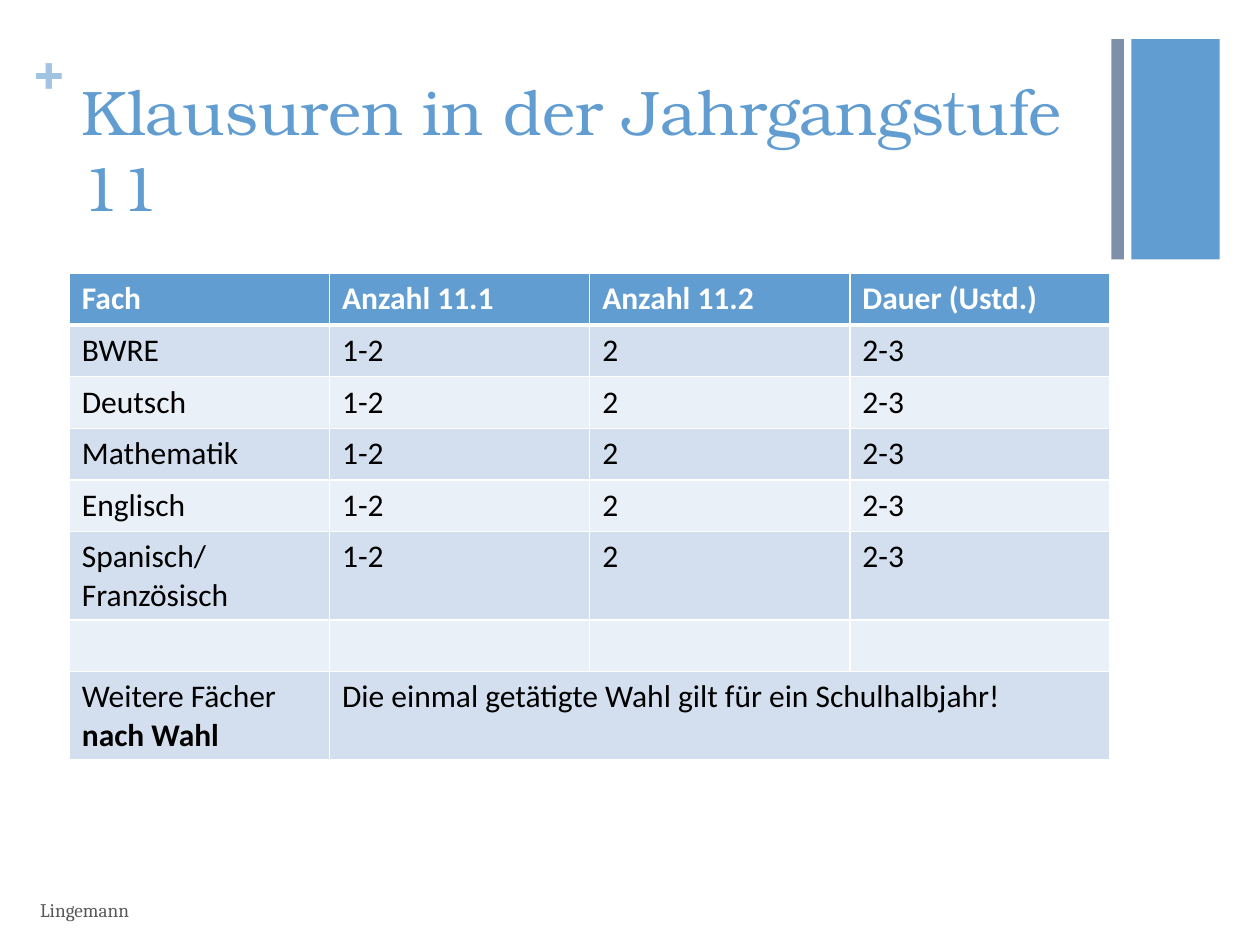
from lxml.etree import SubElement
from pptx import Presentation
from pptx.dml.color import RGBColor
from pptx.enum.shapes import MSO_SHAPE
from pptx.enum.text import MSO_ANCHOR
from pptx.oxml.ns import qn
from pptx.util import Inches, Pt

BLUE = RGBColor(0x62, 0x9D, 0xD1)
LIGHT_BLUE = RGBColor(0xA1, 0xC4, 0xE3)
SLATE = RGBColor(0x7F, 0x8F, 0xA9)
BAND_DARK = RGBColor(0xD3, 0xDF, 0xEE)
BAND_LIGHT = RGBColor(0xEA, 0xF0, 0xF7)
WHITE = RGBColor(0xFF, 0xFF, 0xFF)
BLACK = RGBColor(0, 0, 0)
GREY = RGBColor(0x59, 0x59, 0x59)

TITLE = "Klausuren in der Jahrgangstufe 11"
AUTHOR = "Lingemann"
HEADER = ["Fach", "Anzahl 11.1", "Anzahl 11.2", "Dauer (Ustd.)"]
SUBJECTS = ["BWRE", "Deutsch", "Mathematik", "Englisch", "Spanisch/\nFranzösisch"]
EXAMS = ["1-2", "2", "2-3"]
CHOICE = ["Weitere Fächer ", "nach Wahl"]
CHOICE_NOTE = "Die einmal getätigte Wahl gilt für ein Schulhalbjahr!"
ROWS = [HEADER] + [[subject] + EXAMS for subject in SUBJECTS] + [[""] * 4, ["", CHOICE_NOTE, "", ""]]

LEFT, CONTENT_WIDTH = 0.55, 8.26
TABLE_TOP, ROW_HEIGHT, TALL_ROW_HEIGHT = 2.17, 0.41, 0.7
BAR_TOP, BAR_HEIGHT = 0.31, 1.75
BARS = [(8.98, 0.7, BLUE), (8.82, 0.1, SLATE)]


def add_run(paragraph, text, font="Calibri", size=18, color=BLACK, bold=False):
    run = paragraph.add_run()
    run.text = text
    run.font.name = font
    run.font.size = Pt(size)
    run.font.bold = bold
    run.font.color.rgb = color


def add_text(slide, text, box, margin=None, anchor=MSO_ANCHOR.TOP, **text_format):
    frame = slide.shapes.add_textbox(*map(Inches, box)).text_frame
    frame.word_wrap = True
    frame.vertical_anchor = anchor
    if margin is not None:
        frame.margin_left = frame.margin_right = Inches(margin)
        frame.margin_top = frame.margin_bottom = Inches(margin)
    add_run(frame.paragraphs[0], text, **text_format)


def add_bar(slide, left, width, color):
    box = map(Inches, (left, BAR_TOP, width, BAR_HEIGHT))
    shape = slide.shapes.add_shape(MSO_SHAPE.RECTANGLE, *box)
    shape.shadow.inherit = False
    shape.fill.solid()
    shape.fill.fore_color.rgb = color
    shape.line.fill.background()


def set_borders(cell, top, bottom):
    properties = cell._tc.get_or_add_tcPr()
    for side, width in (("L", 1), ("R", 1), ("T", top), ("B", bottom)):
        line = SubElement(properties, qn("a:ln" + side), w=str(Pt(width)))
        fill = SubElement(line, qn("a:solidFill"))
        SubElement(fill, qn("a:srgbClr"), val=str(WHITE))


def add_table(slide):
    column_count = len(HEADER)
    box = map(Inches, (LEFT, TABLE_TOP, CONTENT_WIDTH, ROW_HEIGHT * len(ROWS)))
    table = slide.shapes.add_table(len(ROWS), column_count, *box).table
    for column in table.columns:
        column.width = Inches(CONTENT_WIDTH / column_count)
    last = len(ROWS) - 1
    for row_index, values in enumerate(ROWS):
        is_header = row_index == 0
        is_tall = row_index in (len(SUBJECTS), last)
        table.rows[row_index].height = Inches(TALL_ROW_HEIGHT if is_tall else ROW_HEIGHT)
        band = BLUE if is_header else (BAND_LIGHT, BAND_DARK)[row_index % 2]
        for column_index, value in enumerate(values):
            cell = table.cell(row_index, column_index)
            set_borders(cell, top=3 if row_index == 1 else 1, bottom=3 if is_header else 1)
            cell.fill.solid()
            cell.fill.fore_color.rgb = band
            frame = cell.text_frame
            for line_index, line in enumerate(value.split("\n") if value else []):
                paragraph = frame.add_paragraph() if line_index else frame.paragraphs[0]
                add_run(paragraph, line, color=WHITE if is_header else BLACK, bold=is_header)
    choice_paragraph = table.cell(last, 0).text_frame.paragraphs[0]
    for text, bold in zip(CHOICE, (False, True)):
        add_run(choice_paragraph, text, bold=bold)
    table.cell(last, 1).merge(table.cell(last, column_count - 1))


def main():
    presentation = Presentation()
    presentation.slide_width, presentation.slide_height = Inches(10), Inches(7.5)
    slide = presentation.slides.add_slide(presentation.slide_layouts[6])
    for bar in BARS:
        add_bar(slide, *bar)
    add_text(slide, "+", (0.24, 0.25, 0.28, 0.61), margin=0,
             font="Cambria", size=36, color=LIGHT_BLUE, bold=True)
    add_text(slide, TITLE, (LEFT, 0.53, CONTENT_WIDTH, 1.22),
             font="TeX Gyre Bonum", size=36, color=BLUE)
    add_table(slide)
    add_text(slide, AUTHOR, (0.22, 7.02, 6.7, 0.4), anchor=MSO_ANCHOR.MIDDLE,
             font="Cambria", size=11, color=GREY)
    presentation.save("out.pptx")


if __name__ == "__main__":
    main()
